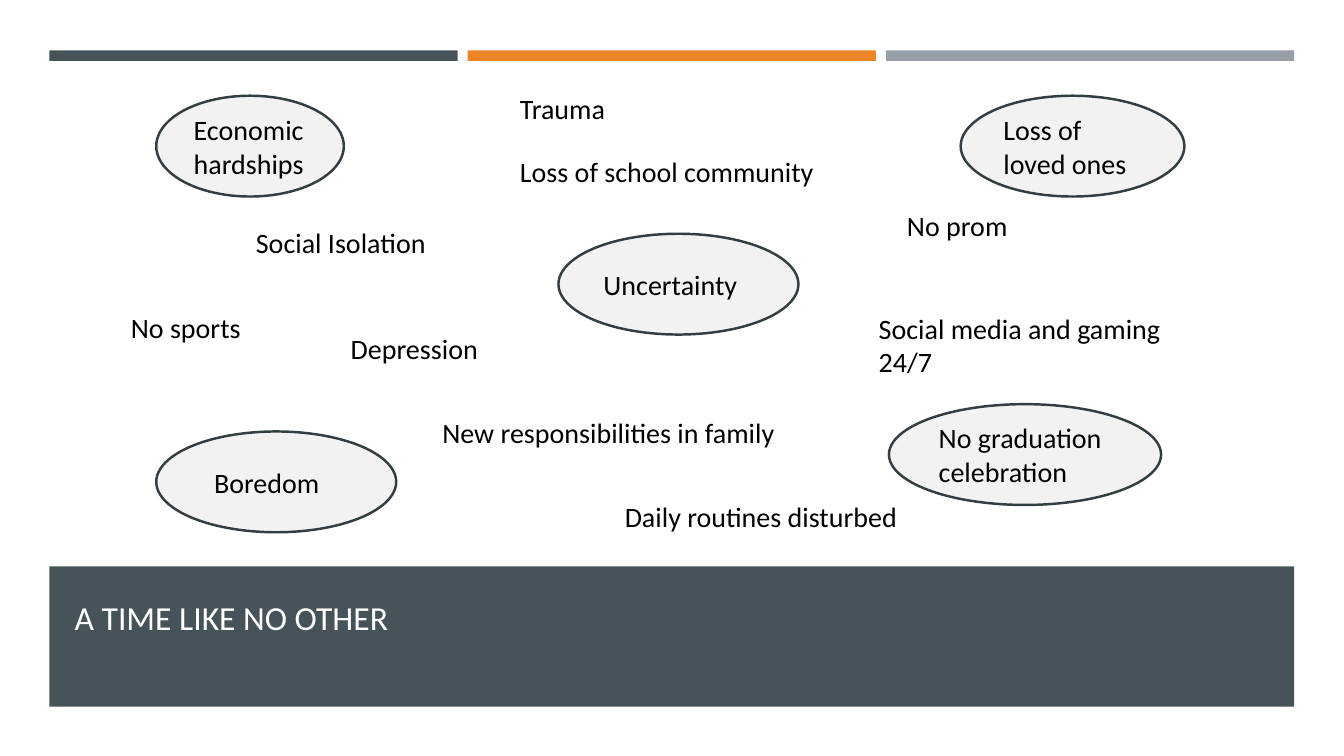
from dataclasses import dataclass

from pptx import Presentation
from pptx import util as u
from pptx.dml.color import RGBColor
from pptx.enum import shapes, text

FONT = "Calibri"
COLORS = {
    "slate": "465359",
    "orange": "ED8428",
    "gray": "969FA7",
    "bubble": "F2F2F2",
    "outline": "343D42",
    "black": "000000",
    "white": "FFFFFF",
}
MARGIN = 35.3
BAR_WIDTH = 291.6
BAR_STEP = 298.8
LABEL_HEIGHT = 31.7
BUBBLE_HEIGHT = 72
INSET = 7.2


@dataclass
class Label:
    words: str
    left: float
    top: float
    width: float


@dataclass
class Bubble(Label):
    indent: float = 0


LABELS = [
    Label("Social Isolation", 175.7, 157.7, 136.2),
    Label("Depression", 243.4, 233.3, 108),
    Label("Loss of school community", 364.3, 106.6, 228.3),
    Label("No prom", 640.8, 145.4, 91.5),
    Label("No sports", 86.4, 218.2, 98.7),
    Label("Social media and gaming 24/7", 620.6, 218.9, 252.7),
    Label("Daily routines disturbed", 439.2, 353.5, 211.7),
    Label("New responsibilities in family", 308.9, 293, 252.7),
    Label("Trauma", 364.3, 61.9, 75.5),
]
BUBBLES = [
    Bubble("Loss of loved ones", 686.2, 68.4, 159.8),
    Bubble("Economic hardships", 111.6, 68.4, 134),
    Bubble("Uncertainty", 398.9, 167, 171.4),
    Bubble("Boredom", 111.6, 308.2, 171.4, indent=9),
    Bubble("No graduation celebration", 635, 288.7, 194.4),
]


def color(name: str) -> RGBColor:
    return RGBColor.from_string(COLORS[name])


def write(box, words: str, size: float, ink: str, anchor, indent: float = 0) -> None:
    frame = box.text_frame
    frame.text = words
    frame.word_wrap = True
    frame.auto_size = text.MSO_AUTO_SIZE.NONE
    frame.vertical_anchor = anchor
    frame.margin_left = u.Pt(INSET + indent)
    para = frame.paragraphs[0]
    para.alignment = text.PP_ALIGN.LEFT
    for span in para.runs:
        span.font.name = FONT
        span.font.size = u.Pt(size)
        span.font.color.rgb = color(ink)


def add_filled(page, kind, left: float, top: float, width: float, height: float, fill: str):
    """Add a preset shape with a flat fill, no outline and no shadow."""
    box = page.shapes.add_shape(kind, u.Pt(left), u.Pt(top), u.Pt(width), u.Pt(height))
    box.shadow.inherit = False
    box.fill.solid()
    box.fill.fore_color.rgb = color(fill)
    box.line.fill.background()
    return box


def add_label(page, label: Label) -> None:
    box = page.shapes.add_textbox(
        u.Pt(label.left), u.Pt(label.top), u.Pt(label.width), u.Pt(LABEL_HEIGHT)
    )
    write(box, label.words, 20, "black", text.MSO_ANCHOR.TOP)


def add_bubble(page, bubble: Bubble) -> None:
    box = add_filled(page, shapes.MSO_SHAPE.OVAL, bubble.left, bubble.top,
                     bubble.width, BUBBLE_HEIGHT, "bubble")
    box.line.color.rgb = color("outline")
    box.line.width = u.Pt(1.75)
    write(box, bubble.words, 20, "black", text.MSO_ANCHOR.MIDDLE, bubble.indent)


def add_title(page, words: str) -> None:
    """Fill the title placeholder and bring it in front of the band."""
    title = page.shapes.title
    title.left, title.top = u.Pt(46.1), u.Pt(414)
    title.width, title.height = u.Pt(386.6), u.Pt(54)
    write(title, words, 24, "white", text.MSO_ANCHOR.MIDDLE)
    title.element.getparent().append(title.element)


def main() -> None:
    deck = Presentation()
    deck.slide_width, deck.slide_height = u.Pt(960), u.Pt(540)
    page = deck.slides.add_slide(deck.slide_layouts[5])

    rectangle = shapes.MSO_SHAPE.RECTANGLE
    for column, fill in enumerate(("slate", "orange", "gray")):
        add_filled(page, rectangle, MARGIN + column * BAR_STEP, 36, BAR_WIDTH, 7.5, fill)
    add_filled(page, rectangle, MARGIN, 404.6, 2 * BAR_STEP + BAR_WIDTH, 100.1, "slate")
    add_title(page, "A TIME LIKE NO OTHER")

    for label in LABELS:
        add_label(page, label)
    for bubble in BUBBLES:
        add_bubble(page, bubble)

    deck.save("out.pptx")


if __name__ == "__main__":
    main()
